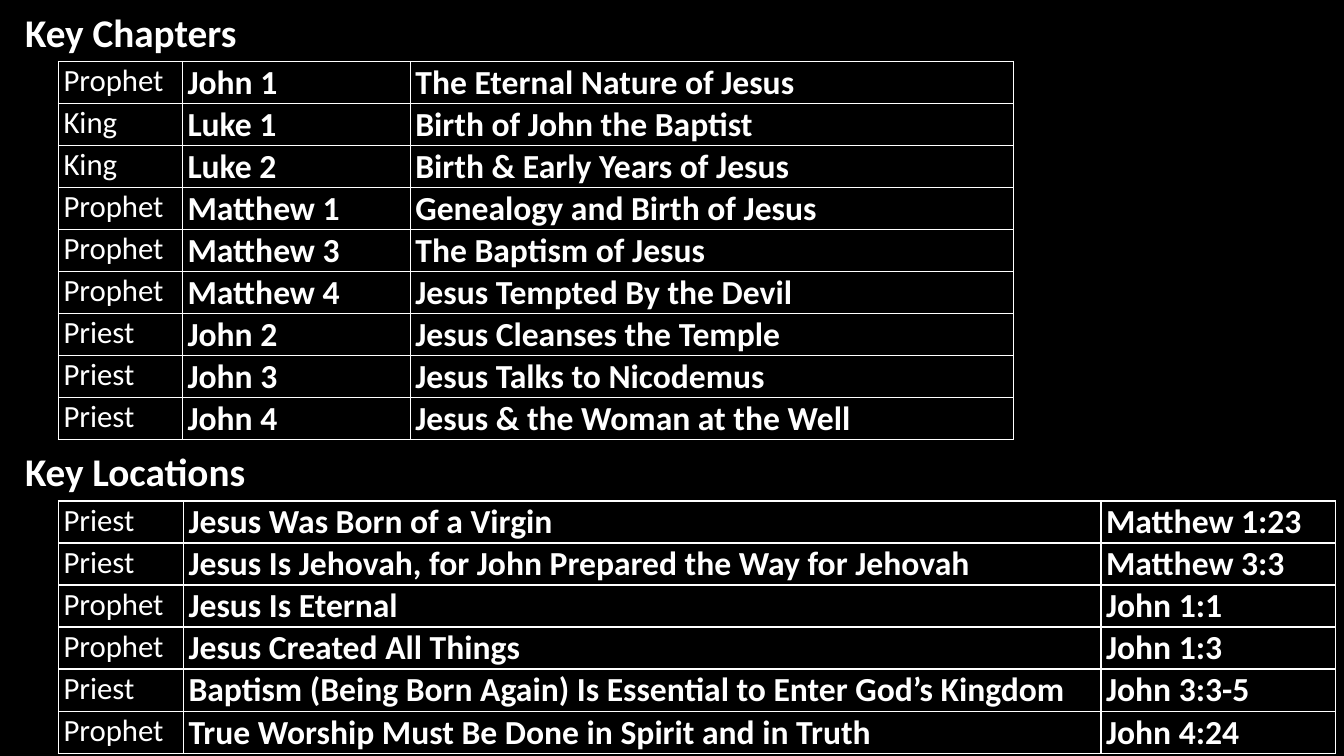
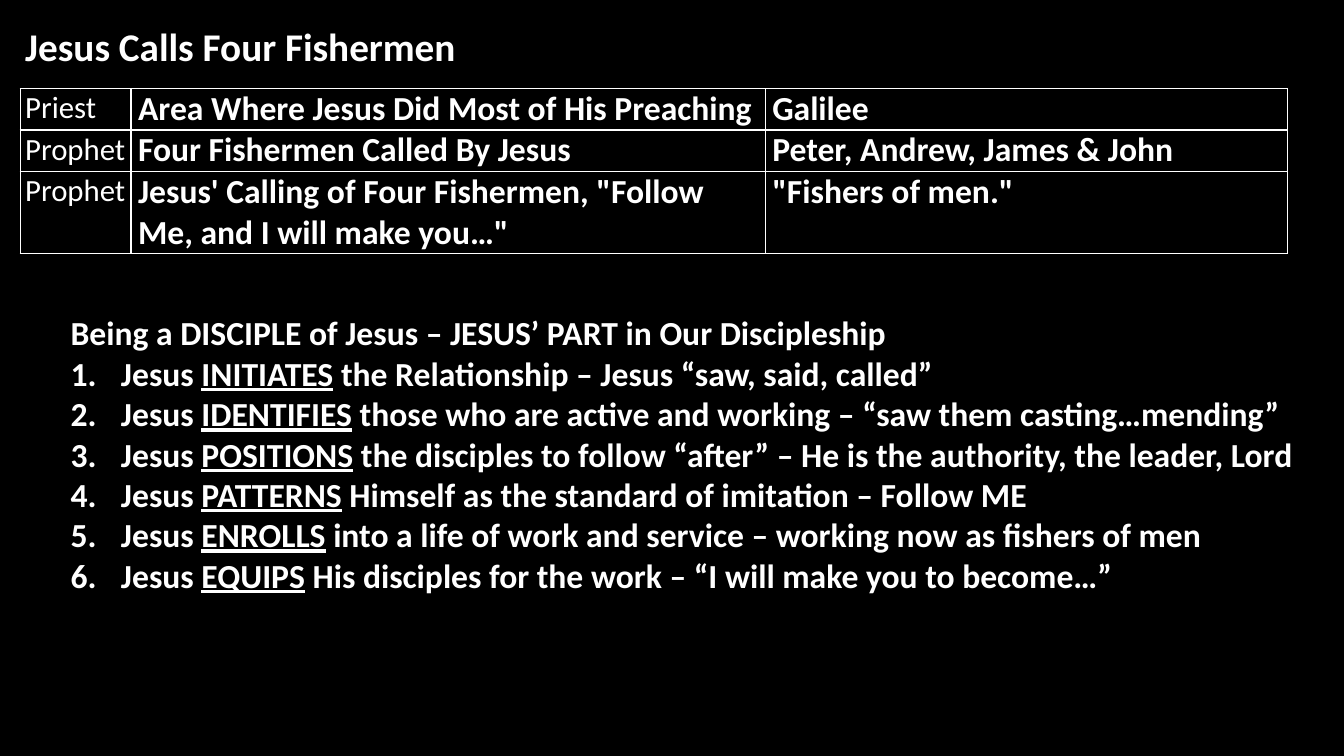
from lxml.etree import SubElement
from pptx import Presentation
from pptx.dml.color import RGBColor
from pptx.enum.text import MSO_ANCHOR, MSO_AUTO_SIZE, PP_ALIGN
from pptx.oxml import parse_xml
from pptx.oxml.ns import nsdecls, qn
from pptx.util import Pt

PX = 9144  # 100 px to the inch
COLORS = {"background": "000000", "text": "FFFFFF", "border": "FFFFFF"}
FONT = "Calibri"
HEADING = {"size": Pt(28), "bold": True}
LABEL = {"size": Pt(22), "bold": False}
ENTRY = {"size": Pt(24), "bold": True}
ROW = 41
SIDES = ("margin_left", "margin_top", "margin_right", "margin_bottom")
TIGHT = (5, 1, 1, 0)
ROOMY = (7, 0, 7, 0)


def add_run(p, text, fmt, underline=False):
    r = p.add_run()
    r.text = text
    r.font.name = FONT
    r.font.color.rgb = RGBColor.from_string(COLORS["text"])
    for name, value in {**fmt, "underline": underline}.items():
        setattr(r.font, name, value)


def place(sp, left, top, width, height):
    """Move a text shape and give its frame the common layout."""
    sp.left, sp.top, sp.width, sp.height = (
        v * PX for v in (left, top, width, height))
    tf = sp.text_frame
    tf.word_wrap = True
    tf.auto_size = MSO_AUTO_SIZE.NONE
    tf.vertical_anchor = MSO_ANCHOR.TOP
    for side, margin in zip(SIDES, (10, 5, 10, 5)):
        setattr(tf, side, margin * PX)
    return tf


prs = Presentation()
prs.slide_width, prs.slide_height = 1333 * PX, 750 * PX
fill = prs.slide_master.background.fill
fill.solid()
fill.fore_color.rgb = RGBColor.from_string(COLORS["background"])
chapters = prs.slides.add_slide(prs.slide_layouts[5])
fishermen = prs.slides.add_slide(prs.slide_layouts[1])

# Headings
headings = [
    (chapters.shapes.title, 3, "Key Chapters"),
    (chapters.shapes.add_textbox(0, 0, 0, 0), 439, "Key Locations"),
    (fishermen.shapes.title, 17, "Jesus Calls Four Fishermen"),
]
for sp, top, text in headings:
    p = place(sp, 15, top, 1166, 57).paragraphs[0]
    p.alignment = PP_ALIGN.LEFT
    add_run(p, text, HEADING)

# Tables
chapter_rows = [
    ("Prophet", "John 1", "The Eternal Nature of Jesus"),
    ("King", "Luke 1", "Birth of John the Baptist"),
    ("King", "Luke 2", "Birth & Early Years of Jesus"),
    ("Prophet", "Matthew 1", "Genealogy and Birth of Jesus"),
    ("Prophet", "Matthew 3", "The Baptism of Jesus"),
    ("Prophet", "Matthew 4", "Jesus Tempted By the Devil"),
    ("Priest", "John 2", "Jesus Cleanses the Temple"),
    ("Priest", "John 3", "Jesus Talks to Nicodemus"),
    ("Priest", "John 4", "Jesus & the Woman at the Well"),
]
location_rows = [
    ("Priest", "Jesus Was Born of a Virgin", "Matthew 1:23"),
    ("Priest", "Jesus Is Jehovah, for John Prepared the Way for Jehovah",
     "Matthew 3:3"),
    ("Prophet", "Jesus Is Eternal", "John 1:1"),
    ("Prophet", "Jesus Created All Things", "John 1:3"),
    ("Priest", "Baptism (Being Born Again) Is Essential to Enter God’s Kingdom",
     "John 3:3-5"),
    ("Prophet", "True Worship Must Be Done in Spirit and in Truth", "John 4:24"),
]
calling_rows = [
    ("Priest", "Area Where Jesus Did Most of His Preaching", "Galilee"),
    ("Prophet", "Four Fishermen Called By Jesus", "Peter, Andrew, James & John"),
    ("Prophet",
     "Jesus' Calling of Four Fishermen, \"Follow Me, and I will make you…\"",
     "\"Fishers of men.\""),
]
tables = [
    (chapters, 58, 61, (123, 226, 598), TIGHT, chapter_rows),
    (chapters, 58, 497, (124, 910, 233), TIGHT, location_rows),
    (fishermen, 20, 88, (110, 629, 518), ROOMY, calling_rows),
]
for s, left, top, widths, entry_margins, rows in tables:
    table = s.shapes.add_table(
        len(rows), len(widths), left * PX, top * PX,
        sum(widths) * PX, len(rows) * ROW * PX).table
    table.first_row = table.horz_banding = False
    for column, width in zip(table.columns, widths):
        column.width = width * PX
    for i, row in enumerate(rows):
        table.rows[i].height = ROW * PX
        for j, text in enumerate(row):
            cell = table.cell(i, j)
            cell.fill.background()
            margins = entry_margins if j else TIGHT
            for side, margin in zip(SIDES, margins):
                setattr(cell, side, margin * PX)
            add_run(cell.text_frame.paragraphs[0], text, ENTRY if j else LABEL)
            tcPr = cell._tc.get_or_add_tcPr()
            for k, edge in enumerate(("lnL", "lnR", "lnT", "lnB")):
                tcPr.insert(k, parse_xml(
                    f'<a:{edge} {nsdecls("a")} w="{Pt(1)}"><a:solidFill>'
                    f'<a:srgbClr val="{COLORS["border"]}"/>'
                    f'</a:solidFill></a:{edge}>'))
# The last question runs over two lines
table.rows[2].height = 79 * PX

# Numbered list
steps = [
    ("INITIATES", " the Relationship – Jesus “saw, said, called”"),
    ("IDENTIFIES",
     " those who are active and working – “saw them casting…mending”"),
    ("POSITIONS",
     " the disciples to follow “after” – He is the authority, the leader, Lord"),
    ("PATTERNS", " Himself as the standard of imitation – Follow ME"),
    ("ENROLLS",
     " into a life of work and service – working now as fishers of men"),
    ("EQUIPS", " His disciples for the work – “I will make you to become…”"),
]
tf = place(fishermen.placeholders[1], 60, 307, 1246, 331)
p = tf.paragraphs[0]
p.line_spacing = 0.95
p.space_before = Pt(0)
add_run(p, "Being a DISCIPLE of Jesus – JESUS’ PART in Our Discipleship", ENTRY)
pPr = p._p.get_or_add_pPr()
pPr.set("marL", "0")
pPr.set("indent", "0")
SubElement(pPr, qn("a:buNone"))
for verb, rest in steps:
    p = tf.add_paragraph()
    p.space_before = Pt(0)
    add_run(p, "Jesus ", ENTRY)
    add_run(p, verb, ENTRY, underline=True)
    add_run(p, rest, ENTRY)
    pPr = p._p.get_or_add_pPr()
    pPr.set("marL", str(50 * PX))
    pPr.set("indent", str(-50 * PX))
    SubElement(pPr, qn("a:buFont"), typeface=FONT)
    SubElement(pPr, qn("a:buAutoNum"), type="arabicPeriod")

prs.save("out.pptx")
